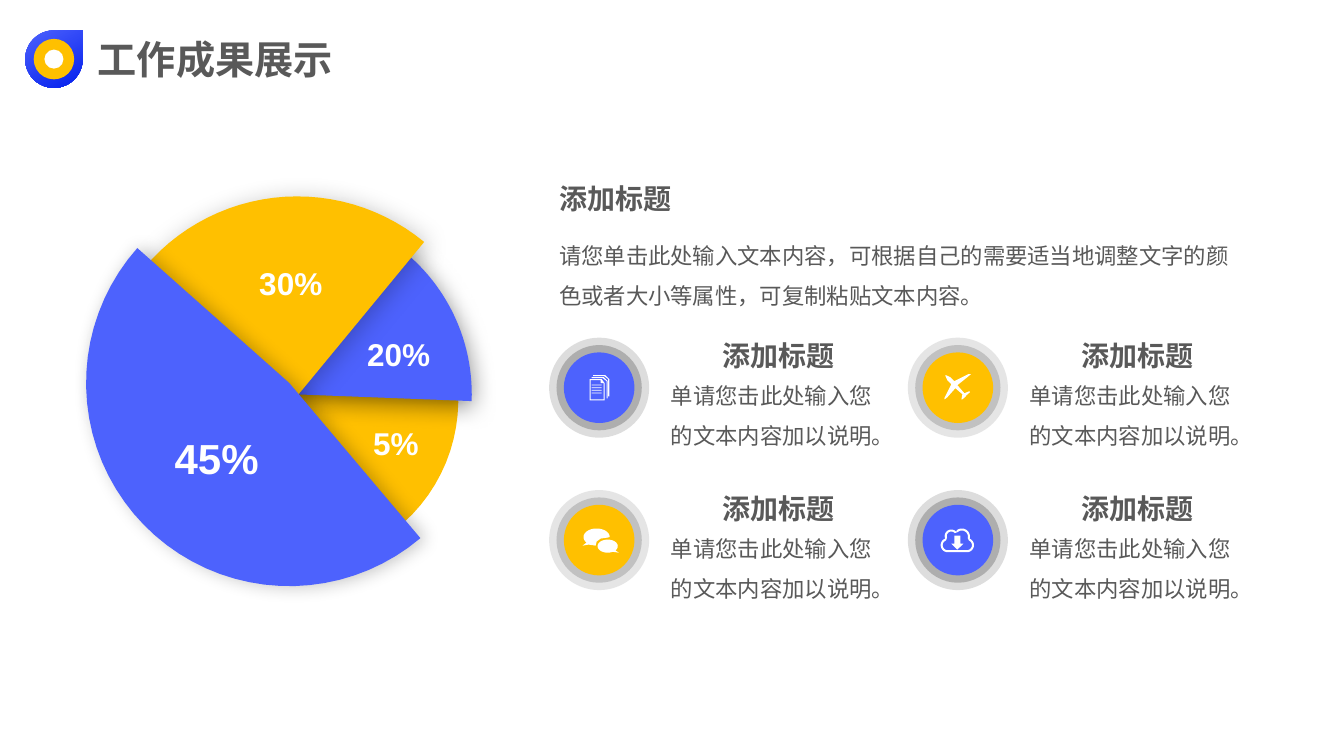
from math import cos, radians, sin

from lxml.etree import SubElement
from pptx import Presentation
from pptx.dml.color import RGBColor
from pptx.enum.shapes import MSO_SHAPE as Kind
from pptx.enum.text import MSO_ANCHOR as Anchor, MSO_AUTO_SIZE as Auto, PP_ALIGN as Align
from pptx.oxml.ns import qn
from pptx.util import Cm, Pt

BLUE = RGBColor(0x4D, 0x62, 0xFD)
DEEP = RGBColor(0x04, 0x20, 0xED)
GOLD = RGBColor(0xFF, 0xC0, 0x00)
WHITE = RGBColor(0xFF, 0xFF, 0xFF)
INK = RGBColor(0x59, 0x59, 0x59)
GRAY = RGBColor(0x7F, 0x7F, 0x7F)
FONT = "Arial"


def arc(x, y, wide, high, start, end):
    """Points along an ellipse, with angles in degrees, clockwise from the right."""
    turns = [radians(start + (end - start) * i / 40) for i in range(41)]
    return [(x + wide * cos(t), y + high * sin(t)) for t in turns]


def style(run, size, color, bold):
    font = run.font
    font.name, font.size, font.bold = FONT, Pt(size), bold
    font.color.rgb = color


deck = Presentation()
deck.slide_width, deck.slide_height = Cm(33.87), Cm(19.05)
slide = deck.slides.add_slide(deck.slide_layouts[5])
shapes = slide.shapes

# Title
title = shapes.title
title.left, title.top, title.width, title.height = Cm(2.21), Cm(0.76), Cm(6.6), Cm(1.45)
frame = title.text_frame
frame.auto_size = Auto.NONE
frame.vertical_anchor = Anchor.MIDDLE
para = frame.paragraphs[0]
para.alignment = Align.LEFT
run = para.add_run()
run.text = "工作成果展示"
style(run, 28, INK, True)

# Icons, in hundredths of an inch around the middle of their disc
strip = [(-7.5, -10.5), (4.5, -10.5), (8.5, -6.5), (8.5, 10.5),
         (7.5, 10.5), (7.5, -6.5), (3.5, -9.5), (-7.5, -9.5)]
pages = [
    [(-9.5, -8.5), (2.5, -8.5), (5.5, -4.5), (5.5, 12.5), (-9.5, 12.5)],
    [(-8.5, -7.5), (1.5, -7.5), (1.5, -4.5), (4.5, -4.5), (4.5, 11.5), (-8.5, 11.5)],
    strip,
    [(x + 1.5, y - 2) for x, y in strip],
]
for i in range(4):
    y = -3 + 2.6 * i
    pages.append([(-7.5, y), (2.5, y), (2.5, y + 0.8), (-7.5, y + 0.8)])

plane = [[
    (-13.5, 10.5), (-6.5, -3.5), (-10.5, -7.5), (-12.5, -12), (-12, -12.5), (-7.5, -10.5),
    (-3.5, -6.5), (10.5, -13.5), (13, -13.5), (9.5, -10.5), (-0.5, -2.5), (6.5, 5.5),
    (11.5, 3.5), (12, 4.5), (8.5, 7.5), (8, 8.5), (4.5, 11.5), (3.5, 11.5),
    (4.5, 6.5), (-2.5, 0.5), (-10.5, 9.5), (-13, 11.5),
]]

chat = [
    arc(-2.5, -3, 13, 8.5, 0, -220)
    + [(-16.5, 5.5), (-10.5, 4.5), (-3.5, 5.5), (-2.5, 1.5), (1.5, -1.5), (8.5, -2.5)],
    arc(8.5, 6, 10, 6.5, 40, -300) + [(19.5, 12.5)],
]

lobes = [(-10, 5, 7, 90, 250), (-6.5, -4, 6.5, 160, 320),
         (4, -3.5, 8, 230, 375), (9, 5, 7, -65, 90)]
cloud = [
    [p for x, y, r, start, end in lobes for p in arc(x, y, r - rim, r - rim, start, end)]
    for rim in (0, 2)
]
cloud.append([(-3.5, -4.5), (2.5, -4.5), (2.5, 3.5), (5.5, 3.5),
              (-0.5, 9.5), (-6.5, 3.5), (-3.5, 3.5)])

# Discs: kind, middle, size, colour, opacity in percent
discs = [
    (Kind.TEAR, 1.36, 1.49, 1.45, BLUE, 100),
    (Kind.OVAL, 1.36, 1.49, 1.02, GOLD, 100),
    (Kind.OVAL, 1.36, 1.49, 0.48, WHITE, 100),
]
# Outlines: contours, middle, unit, colour, shadow (opacity, blur, distance, angle)
forms = []
slices = [
    (7.39, 10.08, 4.16, -84.7, 86.5, GOLD, None),
    (7.26, 9.93, 4.63, -78.3, 2.2, BLUE, (50, 18, 3, 90)),
    (7.49, 9.98, 5.03, 177.1, 309.5, GOLD, (23, 18, 3, 45)),
    (7.29, 9.65, 5.12, 49.8, 221.6, BLUE, (23, 13, 3, 0)),
]
for x, y, r, start, end, color, shade in slices:
    forms.append(([arc(0, 0, r, r, start, end) + [(0, 0)]], x, y, Cm(1), color, shade))

# Texts: words, left, top, width, height, size, colour, bold, alignment, line spacing
texts = [
    ("添加标题", 13.84, 4.45, 5.92, 1.12, 20, INK, True, Align.LEFT, 1),
    ("请您单击此处输入文本内容，可根据自己的需要适当地调整文字的颜色或者大小等属性，可复制粘贴文本内容。",
     13.84, 5.64, 17.45, 2.18, 16, INK, False, Align.LEFT, 1.5),
]
shares = [("45%", 5.46, 11.54, 30), ("5%", 9.98, 11.18, 22.5),
          ("20%", 10.05, 8.92, 22.5), ("30%", 7.33, 7.14, 22.5)]
for word, x, y, size in shares:
    high = 1.55 if size == 30 else 1.22
    texts.append((word, x - 1.32, y - high / 2, 2.64, high, size, WHITE, True, Align.CENTER, 1))

cards = [(pages, BLUE, INK), (plane, GOLD, GRAY), (chat, GOLD, GRAY), (cloud, BLUE, INK)]
for i, (icon, color, ring) in enumerate(cards):
    x, y = 15.1 + 9.04 * (i % 2), 9.77 + 3.84 * (i // 2)
    discs += [(Kind.OVAL, x, y, 2.52, ring, 20),
              (Kind.OVAL, x, y, 2.15, ring, 35),
              (Kind.OVAL, x, y, 1.78, color, 100)]
    forms.append((icon, x, y, Cm(0.0254), WHITE, None))
    texts += [
        ("添加标题", x + 1.56, y - 1.36, 5.92, 1.12, 20, INK, True, Align.CENTER, 1),
        ("单请您击此处输入您的文本内容加以说明。",
         x + 1.56, y - 0.6, 5.79, 2.18, 16, INK, False, Align.LEFT, 1.5),
    ]

for kind, x, y, size, color, alpha in discs:
    disc = shapes.add_shape(kind, Cm(x - size / 2), Cm(y - size / 2), Cm(size), Cm(size))
    disc.shadow.inherit = False
    disc.line.fill.background()
    fill = disc.fill
    if kind == Kind.TEAR:
        fill.gradient()
        fill.gradient_angle = 300
        for stop, tone in zip(fill.gradient_stops, (color, DEEP)):
            stop.color.rgb = tone
        continue
    fill.solid()
    fill.fore_color.rgb = color
    if alpha < 100:
        tone = disc.element.spPr.find(".//" + qn("a:srgbClr"))
        SubElement(tone, qn("a:alpha"), val=str(alpha * 1000))

for lines, x, y, unit, color, shade in forms:
    pen = None
    for line in lines:
        dots = [(Cm(x) + px * unit, Cm(y) + py * unit) for px, py in line]
        if pen is None:
            pen = shapes.build_freeform(*dots[0])
        else:
            pen.move_to(*dots[0])
        pen.add_line_segments(dots[1:], close=True)
    form = pen.convert_to_shape()
    form.shadow.inherit = False
    form.fill.solid()
    form.fill.fore_color.rgb = color
    form.line.fill.background()
    if shade:
        alpha, blur, dist, angle = shade
        glow = SubElement(form.element.spPr.find(qn("a:effectLst")), qn("a:outerShdw"),
                          blurRad=str(Pt(blur)), dist=str(Pt(dist)),
                          dir=str(angle * 60000), rotWithShape="0")
        tone = SubElement(glow, qn("a:srgbClr"), val="000000")
        SubElement(tone, qn("a:alpha"), val=str(alpha * 1000))

for words, x, y, wide, high, size, color, bold, align, gap in texts:
    frame = shapes.add_textbox(Cm(x), Cm(y), Cm(wide), Cm(high)).text_frame
    frame.word_wrap = True
    para = frame.paragraphs[0]
    para.alignment, para.line_spacing = align, gap
    run = para.add_run()
    run.text = words
    style(run, size, color, bold)

deck.save("out.pptx")
